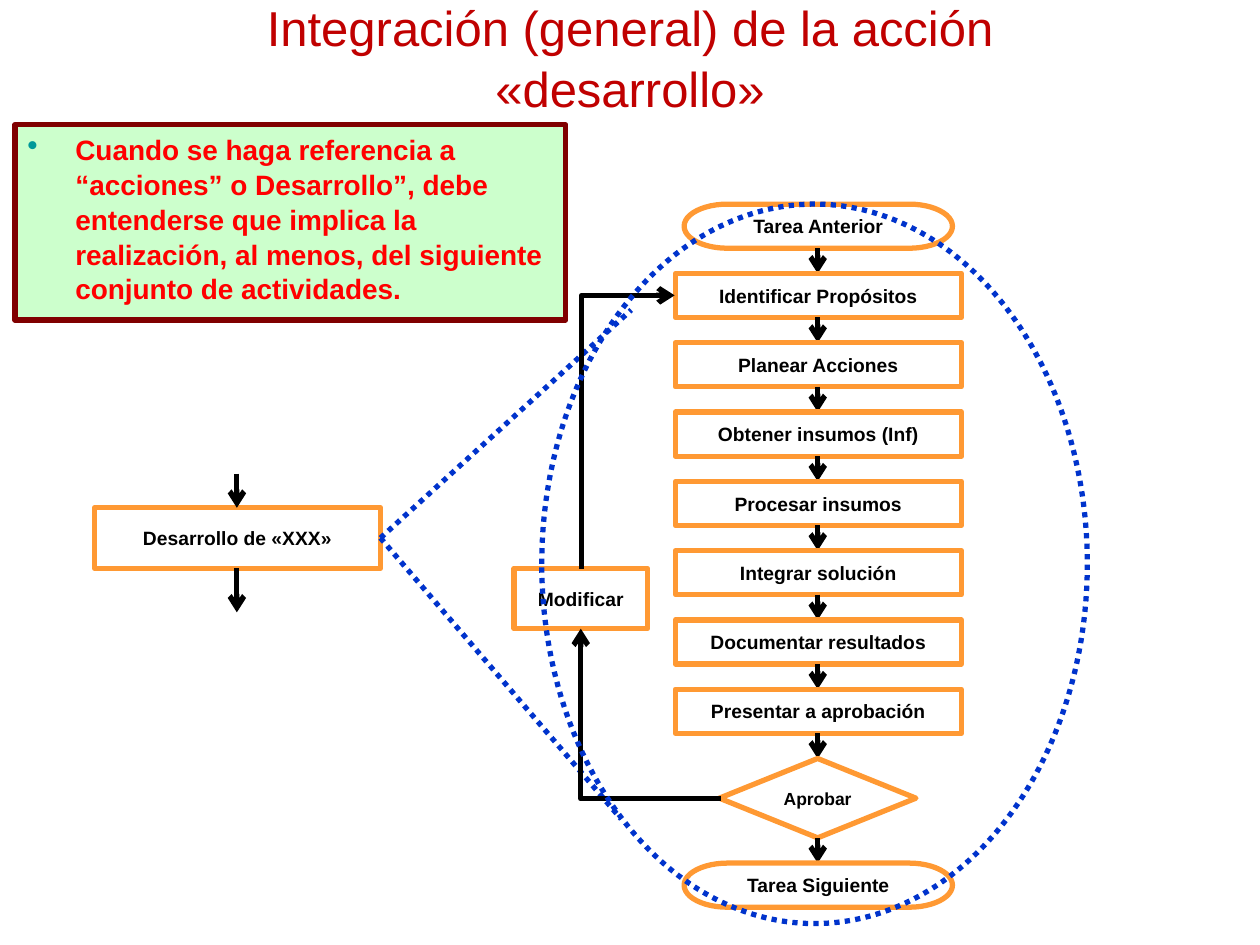
"""Builds the flowchart slide on the integration of the «desarrollo» action."""
from dataclasses import dataclass

from lxml.etree import SubElement
from pptx import Presentation
from pptx.dml.color import RGBColor
from pptx.enum.dml import MSO_LINE
from pptx.enum.shapes import MSO_CONNECTOR, MSO_SHAPE
from pptx.enum.text import MSO_ANCHOR, PP_ALIGN
from pptx.oxml.ns import qn
from pptx.shapes.autoshape import Shape
from pptx.shapes.connector import Connector
from pptx.slide import Slide
from pptx.text.text import _Paragraph
from pptx.util import Emu, Pt

EMU_PER_PX = 9144
CHAIN_CENTER, CHAIN_TOP = 649, 162
STEP_HEIGHT, STEP_GAP = 35, 20


@dataclass(frozen=True)
class Theme:
    font: str = "Arial"
    title: str = "C00000"
    text: str = "000000"
    note_text: str = "FF0000"
    note_fill: str = "CCFFCC"
    note_line: str = "800000"
    bullet: str = "009999"
    box_fill: str = "FFFFFF"
    box_line: str = "FF9933"
    arrow: str = "000000"
    zoom: str = "0033CC"
    title_size: int = 28
    note_size: int = 16
    box_size: int = 11
    decision_size: int = 10
    line_width: int = 3
    line_spacing: float = 1.04


@dataclass(frozen=True)
class Box:
    text: str
    left: int
    top: int
    width: int
    height: int
    kind: MSO_SHAPE = MSO_SHAPE.FLOWCHART_PROCESS
    size: int = Theme.box_size


@dataclass(frozen=True)
class Step:
    text: str
    width: int = 227
    height: int = STEP_HEIGHT
    kind: MSO_SHAPE = MSO_SHAPE.FLOWCHART_PROCESS
    size: int = Theme.box_size


@dataclass(frozen=True)
class Link:
    begin: tuple[int, int]
    end: tuple[int, int]


THEME = Theme()
STEPS = [
    Step("Tarea Anterior", width=213, kind=MSO_SHAPE.FLOWCHART_TERMINATOR),
    Step("Identificar Propósitos"),
    Step("Planear Acciones"),
    Step("Obtener insumos (Inf)"),
    Step("Procesar insumos"),
    Step("Integrar solución"),
    Step("Documentar resultados"),
    Step("Presentar a aprobación"),
    Step("Aprobar", 156, 63, MSO_SHAPE.DIAMOND, THEME.decision_size),
    Step("Tarea Siguiente", width=213, kind=MSO_SHAPE.FLOWCHART_TERMINATOR),
]
SIDE_BOXES = [
    Box("Desarrollo de «XXX»", 75, 403, 227, 48),
    Box("Modificar", 408, 451, 106, 48),
]
SIDE_ARROWS = [Link((188, 376), (188, 403)), Link((188, 451), (188, 486))]
ZOOM_LINES = [Link((302, 427), (501, 246)), Link((302, 427), (493, 650))]
REJECT_LINK = Link((572, 634), (461, 499))
RETURN_LINK = Link((607, 380), (390, 306))


def px(length: int) -> Emu:
    return Emu(length * EMU_PER_PX)


def color(value: str) -> RGBColor:
    return RGBColor.from_string(value)


def format_runs(paragraph: _Paragraph, size: int, value: str, bold: bool) -> None:
    for run in paragraph.runs:
        run.font.name = THEME.font
        run.font.size = Pt(size)
        run.font.bold = bold
        run.font.color.rgb = color(value)


def add_outlined(slide: Slide, box: Box, fill: str | None, line: str) -> Shape:
    shape = slide.shapes.add_shape(
        box.kind, px(box.left), px(box.top), px(box.width), px(box.height))
    shape.shadow.inherit = False
    if fill:
        shape.fill.solid()
        shape.fill.fore_color.rgb = color(fill)
    else:
        shape.fill.background()
    shape.line.color.rgb = color(line)
    shape.line.width = Pt(THEME.line_width)
    return shape


def add_box(slide: Slide, box: Box) -> None:
    shape = add_outlined(slide, box, THEME.box_fill, THEME.box_line)
    text_frame = shape.text_frame
    text_frame.text = box.text
    text_frame.word_wrap = True
    text_frame.vertical_anchor = MSO_ANCHOR.MIDDLE
    paragraph = text_frame.paragraphs[0]
    paragraph.alignment = PP_ALIGN.CENTER
    format_runs(paragraph, box.size, THEME.text, True)


def add_line(slide: Slide, link: Link, value: str,
             kind: MSO_CONNECTOR = MSO_CONNECTOR.STRAIGHT) -> Connector:
    connector = slide.shapes.add_connector(
        kind, *map(px, link.begin), *map(px, link.end))
    connector.line.color.rgb = color(value)
    connector.line.width = Pt(THEME.line_width)
    SubElement(connector._element.spPr, qn("a:effectLst"))
    return connector


def add_arrow(slide: Slide, link: Link,
              kind: MSO_CONNECTOR = MSO_CONNECTOR.STRAIGHT) -> Connector:
    connector = add_line(slide, link, THEME.arrow, kind)
    SubElement(connector.line._get_or_add_ln(), qn("a:tailEnd"), type="arrow")
    return connector


def add_corner_arrow(slide: Slide, link: Link, degrees: int = 0) -> None:
    properties = add_arrow(slide, link, MSO_CONNECTOR.ELBOW)._element.spPr
    properties.find(qn("a:prstGeom")).set("prst", "bentConnector2")
    properties.find(qn("a:xfrm")).set("rot", str(degrees * 60000))


def add_chain(slide: Slide) -> None:
    top = CHAIN_TOP
    for index, step in enumerate(STEPS):
        if index:
            add_arrow(slide, Link((CHAIN_CENTER, top - STEP_GAP), (CHAIN_CENTER, top)))
        left = CHAIN_CENTER - step.width // 2
        add_box(slide, Box(step.text, left, top, step.width, step.height,
                           step.kind, step.size))
        top += step.height + STEP_GAP


def add_title(slide: Slide) -> None:
    shape = slide.shapes.add_textbox(px(130), px(-3), px(740), px(95))
    text_frame = shape.text_frame
    text_frame.text = "Integración (general) de la acción «desarrollo»"
    text_frame.word_wrap = True
    text_frame.vertical_anchor = MSO_ANCHOR.MIDDLE
    paragraph = text_frame.paragraphs[0]
    paragraph.alignment = PP_ALIGN.CENTER
    paragraph.line_spacing = THEME.line_spacing
    format_runs(paragraph, THEME.title_size, THEME.title, False)


def add_note(slide: Slide) -> None:
    box = Box("Cuando se haga referencia a “acciones” o Desarrollo”, debe entenderse "
              "que implica la realización, al menos, del siguiente conjunto de "
              "actividades.", 12, 99, 437, 155, MSO_SHAPE.RECTANGLE, THEME.note_size)
    shape = add_outlined(slide, box, THEME.note_fill, THEME.note_line)
    text_frame = shape.text_frame
    text_frame.text = box.text
    text_frame.word_wrap = True
    text_frame.vertical_anchor = MSO_ANCHOR.TOP
    paragraph = text_frame.paragraphs[0]
    paragraph.alignment = PP_ALIGN.LEFT
    paragraph.line_spacing = THEME.line_spacing
    properties = paragraph._p.get_or_add_pPr()
    properties.set("marL", str(px(38)))
    properties.set("indent", str(px(-38)))
    SubElement(SubElement(properties, qn("a:buClr")), qn("a:srgbClr"), val=THEME.bullet)
    SubElement(properties, qn("a:buSzPct"), val="110000")
    SubElement(properties, qn("a:buChar"), char="•")
    format_runs(paragraph, box.size, THEME.note_text, True)


def main() -> None:
    presentation = Presentation()
    presentation.slide_width, presentation.slide_height = px(1000), px(750)
    slide = presentation.slides.add_slide(presentation.slide_layouts[6])
    add_title(slide)
    for box in SIDE_BOXES:
        add_box(slide, box)
    for link in SIDE_ARROWS:
        add_arrow(slide, link)
    for link in ZOOM_LINES:
        add_line(slide, link, THEME.zoom).line.dash_style = MSO_LINE.ROUND_DOT
    add_chain(slide)
    add_corner_arrow(slide, REJECT_LINK)
    add_corner_arrow(slide, RETURN_LINK, 90)
    ellipse = Box("", 430, 162, 433, 571, MSO_SHAPE.OVAL)
    add_outlined(slide, ellipse, None, THEME.zoom).line.dash_style = MSO_LINE.ROUND_DOT
    add_note(slide)
    presentation.save("out.pptx")


if __name__ == "__main__":
    main()
